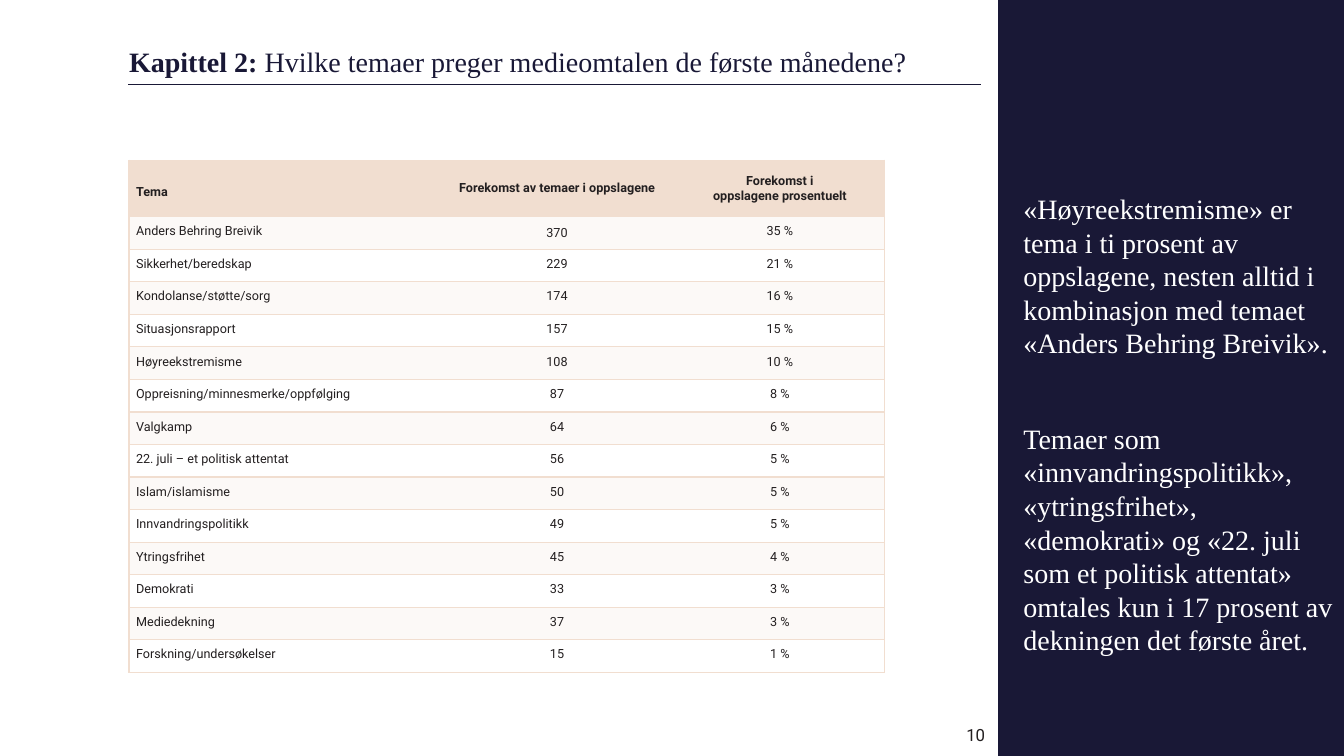
from typing import NamedTuple

from lxml import etree
from pptx import Presentation
from pptx.dml.color import RGBColor
from pptx.enum.shapes import MSO_CONNECTOR, MSO_SHAPE
from pptx.enum.text import MSO_ANCHOR, PP_ALIGN
from pptx.oxml.ns import qn
from pptx.util import Inches, Pt

LEFT, CENTER, RIGHT = PP_ALIGN.LEFT, PP_ALIGN.CENTER, PP_ALIGN.RIGHT
TOP, MIDDLE = MSO_ANCHOR.TOP, MSO_ANCHOR.MIDDLE
RECT, STRAIGHT = MSO_SHAPE.RECTANGLE, MSO_CONNECTOR.STRAIGHT

NAVY = RGBColor(0x19, 0x18, 0x36)
INK = RGBColor(0x23, 0x1F, 0x20)
WHITE = RGBColor(0xFF, 0xFF, 0xFF)
PEACH = RGBColor(0xF1, 0xDE, 0xD0)
PALE = RGBColor(0xFC, 0xF9, 0xF7)
SERIF, SANS = "Times New Roman", "Roboto"


class Topic(NamedTuple):
    name: str
    count: int
    percent: int


HEADINGS = ("Tema", "Forekomst av temaer i oppslagene",
            "Forekomst i\noppslagene prosentuelt")
TOPICS = [
    Topic("Anders Behring Breivik", 370, 35),
    Topic("Sikkerhet/beredskap", 229, 21),
    Topic("Kondolanse/støtte/sorg", 174, 16),
    Topic("Situasjonsrapport", 157, 15),
    Topic("Høyreekstremisme", 108, 10),
    Topic("Oppreisning/minnesmerke/oppfølging", 87, 8),
    Topic("Valgkamp", 64, 6),
    Topic("22. juli – et politisk attentat", 56, 5),
    Topic("Islam/islamisme", 50, 5),
    Topic("Innvandringspolitikk", 49, 5),
    Topic("Ytringsfrihet", 45, 4),
    Topic("Demokrati", 33, 3),
    Topic("Mediedekning", 37, 3),
    Topic("Forskning/undersøkelser", 15, 1),
]
COL_WIDTHS = (3.07, 2.35, 2.07)
TABLE_HEIGHT, HEAD_HEIGHT = 5.08, 0.56
FINDINGS = (
    "«Høyreekstremisme» er tema i ti prosent av oppslagene, nesten alltid i "
    "kombinasjon med temaet «Anders Behring Breivik».",
    "Temaer som «innvandringspolitikk», «ytringsfrihet», «demokrati» og "
    "«22. juli som et politisk attentat» omtales kun i 17 prosent av "
    "dekningen det første året.",
)


def write(p, text: str, *, size: float, font: str, color: RGBColor,
          bold: bool = False, align=LEFT, spacing=None, before=None,
          after=None) -> None:
    """Append text to a paragraph; a newline becomes a line break."""
    p.alignment = align
    p.line_spacing, p.space_before, p.space_after = spacing, before, after
    for i, line in enumerate(text.split("\n")):
        if i:
            p.add_line_break()
        r = p.add_run()
        r.text = line
        r.font.size, r.font.name, r.font.bold = Pt(size), font, bold
        r.font.color.rgb = color


def clear_margins(tf) -> None:
    tf.margin_left = tf.margin_right = tf.margin_top = tf.margin_bottom = 0


def set_borders(cell, visible: str) -> None:
    """Draw the sides named in visible (from LRTB) and hide the others."""
    tc_pr = cell._tc.get_or_add_tcPr()
    for i, side in enumerate("LRTB"):
        ln = etree.Element(qn(f"a:ln{side}"), w=str(Pt(1)))
        if side in visible:
            fill = etree.SubElement(ln, qn("a:solidFill"))
            etree.SubElement(fill, qn("a:srgbClr"), val=str(PEACH))
        else:
            etree.SubElement(ln, qn("a:noFill"))
        tc_pr.insert(i, ln)


def add_topic_table(slide) -> None:
    rows = [HEADINGS] + [(t.name, str(t.count), f"{t.percent} %") for t in TOPICS]
    table = slide.shapes.add_table(
        len(rows), len(COL_WIDTHS), Inches(1.28), Inches(1.59),
        Inches(sum(COL_WIDTHS)), Inches(TABLE_HEIGHT)).table
    table.horz_banding = False
    last = len(COL_WIDTHS) - 1
    for col, width in zip(table.columns, COL_WIDTHS):
        col.width = Inches(width)
    for i, texts in enumerate(rows):
        head = i == 0
        table.rows[i].height = Inches(
            HEAD_HEIGHT if head else (TABLE_HEIGHT - HEAD_HEIGHT) / len(TOPICS))
        for j, text in enumerate(texts):
            cell = table.cell(i, j)
            # The middle heading and the first count are set tight and centred
            tight = j == 1 and i < 2
            cell.vertical_anchor = MIDDLE if head or tight else TOP
            cell.margin_left = cell.margin_right = Inches(0.07)
            cell.margin_top = cell.margin_bottom = 0
            cell.fill.solid()
            cell.fill.fore_color.rgb = PEACH if head else PALE if i % 2 else WHITE
            set_borders(cell, "TB" + "L" * (j == 0) + "R" * (j == last))
            write(cell.text_frame.paragraphs[0], text, size=9, font=SANS,
                  color=INK, bold=head, align=CENTER if j else LEFT,
                  spacing=None if tight or (head and j) else 1.5,
                  after=None if tight else Pt(8))


def main() -> None:
    prs = Presentation()
    prs.slide_width, prs.slide_height = Inches(13.33), Inches(7.5)
    slide = prs.slides.add_slide(prs.slide_layouts[5])
    shapes = slide.shapes

    # Title and the rule under it
    title = shapes.title
    title.left, title.top = Inches(1.28), Inches(0.42)
    title.width, title.height = Inches(11.48), Inches(0.42)
    tf = title.text_frame
    clear_margins(tf)
    tf.vertical_anchor = MIDDLE
    p = tf.paragraphs[0]
    for text, bold in (("Kapittel 2: ", True),
                       ("Hvilke temaer preger medieomtalen de første månedene?", False)):
        write(p, text, size=20, font=SERIF, color=NAVY, bold=bold, spacing=0.9)

    rule = shapes.add_connector(STRAIGHT, Inches(1.27), Inches(0.84),
                                Inches(9.73), Inches(0.84))
    rule.line.color.rgb = NAVY
    rule.line.width = Pt(0.75)
    etree.SubElement(rule._element.spPr, qn("a:effectLst"))

    # Side panel with the findings
    panel = shapes.add_shape(RECT, Inches(9.9), 0, Inches(3.43), prs.slide_height)
    panel.shadow.inherit = False
    panel.fill.solid()
    panel.fill.fore_color.rgb = NAVY
    panel.line.fill.background()

    tf = shapes.add_textbox(Inches(10.15), Inches(1.9),
                            Inches(3.08), Inches(4.78)).text_frame
    tf.word_wrap = True
    clear_margins(tf)
    for i, finding in enumerate(FINDINGS):
        p = tf.add_paragraph() if i else tf.paragraphs[0]
        write(p, finding, size=20, font=SERIF, color=WHITE, spacing=Pt(24),
              before=Pt(44) if i else None)

    # Topic table
    add_topic_table(slide)

    # Page number
    tf = shapes.add_textbox(Inches(8.76), Inches(7.08),
                            Inches(1.11), Inches(0.42)).text_frame
    tf.word_wrap = True
    tf.vertical_anchor = MIDDLE
    write(tf.paragraphs[0], "10", size=12, font=SANS, color=INK, align=RIGHT)

    prs.save("out.pptx")


if __name__ == "__main__":
    main()
